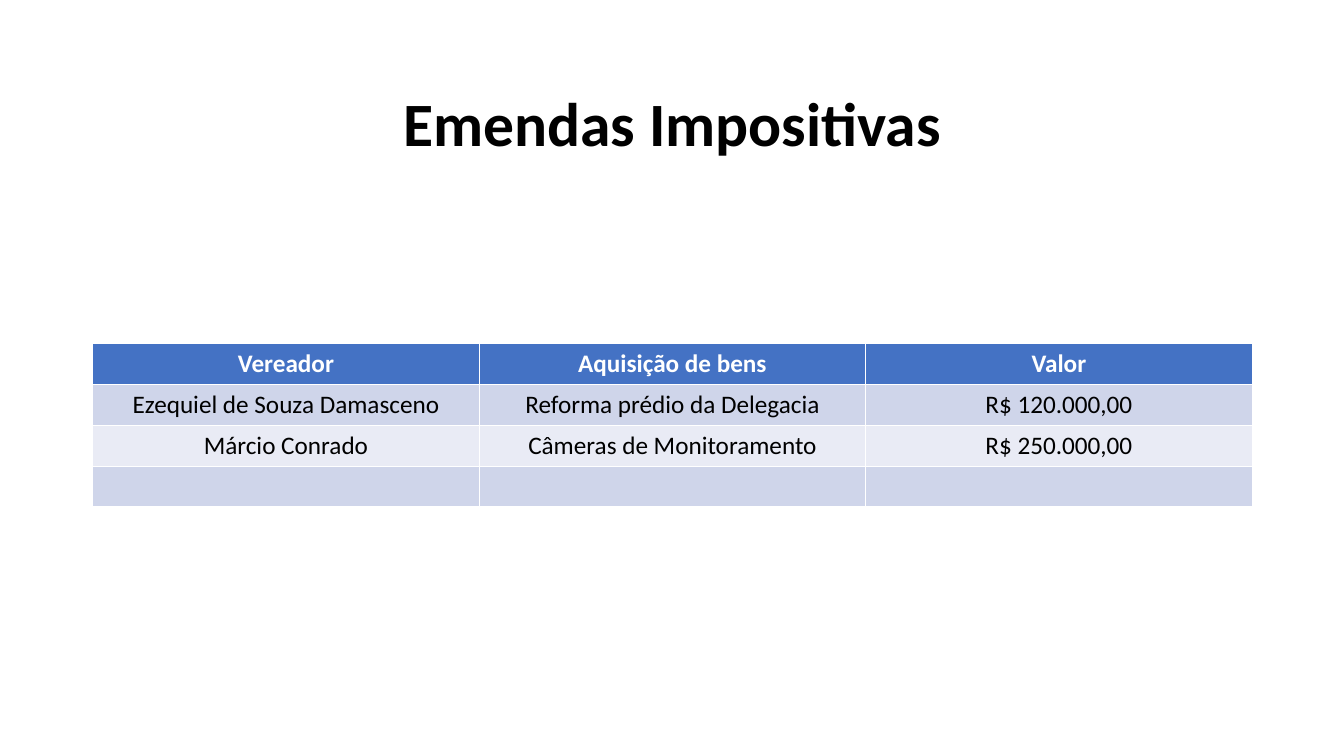
from dataclasses import dataclass

import pptx
import pptx.dml.color
import pptx.enum.text
import pptx.slide
import pptx.text.text
import pptx.util

SLIDE_WIDTH = pptx.util.Inches(13.33)
SLIDE_HEIGHT = pptx.util.Inches(7.5)


@dataclass(frozen=True)
class Theme:
    font: str = "Calibri"
    title_size: int = 44
    table_size: int = 18
    ink: str = "000000"
    header_ink: str = "FFFFFF"
    header_fill: str = "4472C4"
    band_fills: tuple[str, str] = ("CFD5EA", "E9EBF5")


@dataclass(frozen=True)
class Area:
    """A rectangle in inches, on the 13.33 by 7.5 slide."""
    left: float
    top: float
    width: float
    height: float

    def box(self) -> tuple[int, int, int, int]:
        return (pptx.util.Inches(self.left), pptx.util.Inches(self.top),
                pptx.util.Inches(self.width), pptx.util.Inches(self.height))


@dataclass(frozen=True)
class Amendment:
    councillor: str = ""
    purchase: str = ""
    amount: str = ""

    def texts(self) -> tuple[str, str, str]:
        return self.councillor, self.purchase, self.amount


THEME = Theme()
MARGIN = 0.92
CONTENT_WIDTH = 11.5
TITLE_AREA = Area(MARGIN, 0.88, CONTENT_WIDTH, 2.13)
TABLE_AREA = Area(MARGIN, 3.41, CONTENT_WIDTH, 1.62)

HEADINGS = Amendment("Vereador", "Aquisição de bens", "Valor")
AMENDMENTS = (
    Amendment("Ezequiel de Souza Damasceno", "Reforma prédio da Delegacia", "R$ 120.000,00"),
    Amendment("Márcio Conrado", "Câmeras de Monitoramento", "R$ 250.000,00"),
    Amendment(),
)


def rgb(colour: str) -> pptx.dml.color.RGBColor:
    return pptx.dml.color.RGBColor.from_string(colour)


def write_centred(frame: pptx.text.text.TextFrame, text: str, size: int,
                  colour: str, bold: bool) -> None:
    paragraph = frame.paragraphs[0]
    paragraph.text = text
    paragraph.alignment = pptx.enum.text.PP_ALIGN.CENTER
    paragraph.font.name = THEME.font
    paragraph.font.size = pptx.util.Pt(size)
    paragraph.font.bold = bold
    paragraph.font.color.rgb = rgb(colour)


def add_title(slide: pptx.slide.Slide, text: str) -> None:
    frame = slide.shapes.add_textbox(*TITLE_AREA.box()).text_frame
    frame.word_wrap = True
    frame.vertical_anchor = pptx.enum.text.MSO_ANCHOR.TOP
    write_centred(frame, text, THEME.title_size, THEME.ink, bold=True)
    frame.paragraphs[0].line_spacing = 0.9


def add_amendments(slide: pptx.slide.Slide) -> None:
    """Draw the table; its default style supplies the white rules."""
    rows = (HEADINGS, *AMENDMENTS)
    table = slide.shapes.add_table(len(rows), len(HEADINGS.texts()), *TABLE_AREA.box()).table
    for row, amendment in enumerate(rows):
        is_header = row == 0
        fill = THEME.header_fill if is_header else THEME.band_fills[(row - 1) % 2]
        ink = THEME.header_ink if is_header else THEME.ink
        for column, text in enumerate(amendment.texts()):
            cell = table.cell(row, column)
            cell.fill.solid()
            cell.fill.fore_color.rgb = rgb(fill)
            write_centred(cell.text_frame, text, THEME.table_size, ink, bold=is_header)


def main() -> None:
    presentation = pptx.Presentation()
    presentation.slide_width = SLIDE_WIDTH
    presentation.slide_height = SLIDE_HEIGHT
    slide = presentation.slides.add_slide(presentation.slide_layouts[6])
    add_title(slide, "Emendas Impositivas")
    add_amendments(slide)
    presentation.save("out.pptx")


if __name__ == "__main__":
    main()
